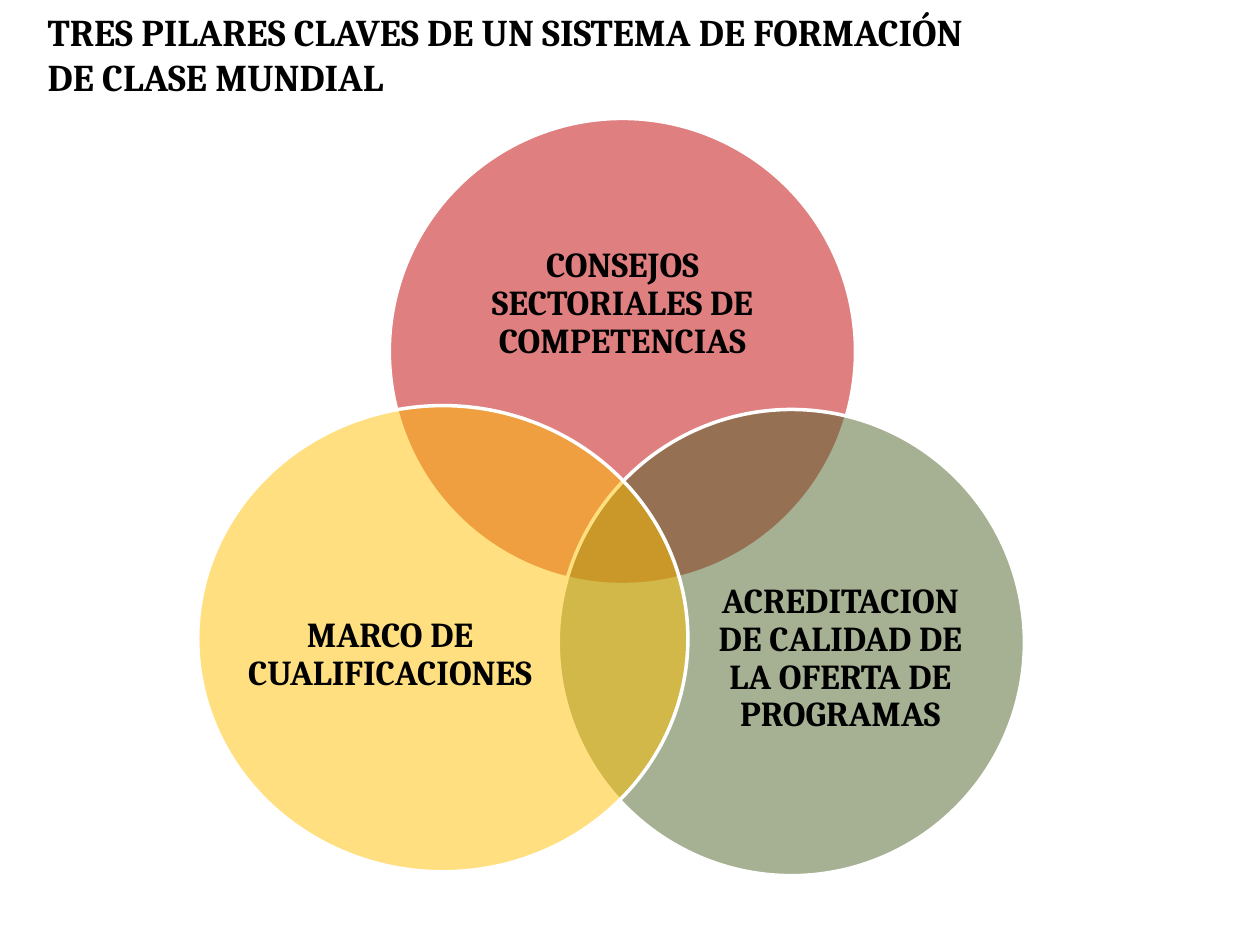
"""Build a slide with a three-circle Venn diagram of training-system pillars."""
from lxml import etree
from pptx import Presentation
from pptx.dml.color import RGBColor
from pptx.enum import shapes, text
from pptx.oxml import ns
from pptx.util import Pt

BLACK = RGBColor(0x00, 0x00, 0x00)
WHITE = RGBColor(0xFF, 0xFF, 0xFF)
RED = RGBColor(0xC0, 0x00, 0x00)
GREEN = RGBColor(0x4F, 0x62, 0x28)
YELLOW = RGBColor(0xFF, 0xC0, 0x00)

TITLE = "TRES PILARES CLAVES DE UN SISTEMA DE FORMACIÓN DE CLASE MUNDIAL"
PILLARS = [
    ("CONSEJOS SECTORIALES DE COMPETENCIAS", RED,
     (222.5, 67.7, 266.4, 266.4), (257.8, 113.8, 195.8, 120.2)),
    ("ACREDITACION DE CALIDAD DE LA OFERTA DE PROGRAMAS", GREEN,
     (319, 234, 266.4, 266.4), (400.3, 303.1, 159.8, 146.9)),
    ("MARCO DE CUALIFICACIONES", YELLOW,
     (113, 231.8, 280.1, 266.4), (139, 301, 167.8, 146.9)),
]


def add_circle(s, box, color):
    sp = s.shapes.add_shape(shapes.MSO_SHAPE.OVAL, *map(Pt, box))
    sp.shadow.inherit = False
    sp.fill.solid()
    sp.fill.fore_color.rgb = color
    clr = sp.fill._xPr.find(ns.qn("a:solidFill"))[0]
    etree.SubElement(clr, ns.qn("a:alpha"), val="50000")
    sp.line.color.rgb = WHITE
    sp.line.width = Pt(2)


def add_text(s, box, content, size, align, anchor, spacing=1.0, insets=(0, 0, 0, 0)):
    tf = s.shapes.add_textbox(*map(Pt, box)).text_frame
    tf.word_wrap = True
    tf.vertical_anchor = anchor
    tf.margin_left, tf.margin_top, tf.margin_right, tf.margin_bottom = map(Pt, insets)
    p = tf.paragraphs[0]
    p.alignment = align
    p.line_spacing = spacing
    r = p.add_run()
    r.text = content
    r.font.name = "Cambria"
    r.font.size = Pt(size)
    r.font.bold = True
    r.font.color.rgb = BLACK


def main():
    prs = Presentation()
    prs.slide_width, prs.slide_height = Pt(720), Pt(540)
    s = prs.slides.add_slide(prs.slide_layouts[6])
    for label, color, circle, label_box in PILLARS:
        add_circle(s, circle, color)
        add_text(s, label_box, label, 20, text.PP_ALIGN.CENTER,
                 text.MSO_ANCHOR.MIDDLE, spacing=0.9)
    add_text(s, (20.2, 0, 544.3, 88), TITLE, 21.6, text.PP_ALIGN.LEFT,
             text.MSO_ANCHOR.TOP, insets=(7.2, 5, 7.2, 3.6))
    prs.save("out.pptx")


if __name__ == "__main__":
    main()
